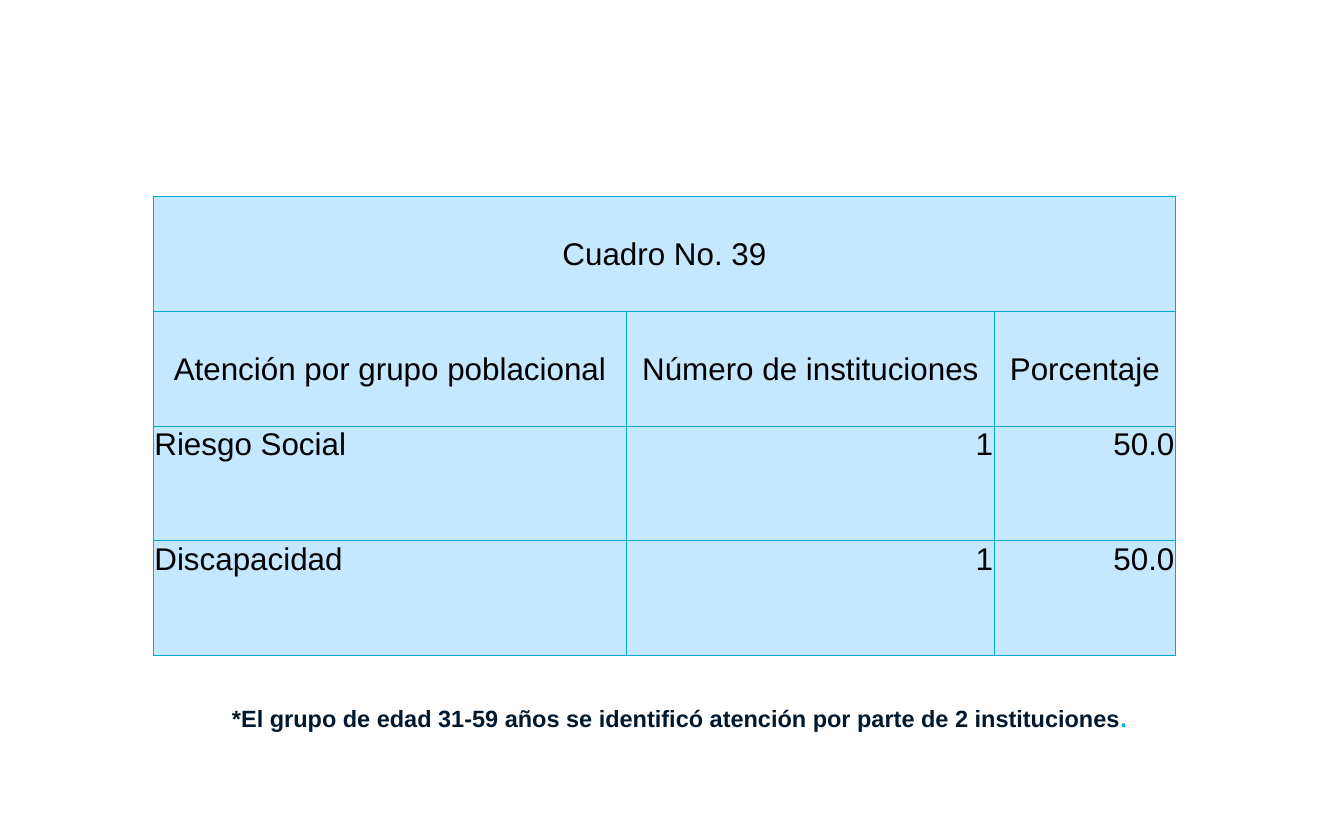
from lxml.etree import SubElement
from pptx import Presentation
from pptx.dml.color import RGBColor
from pptx.enum.text import MSO_ANCHOR as Anchor, MSO_AUTO_SIZE as Fit, PP_ALIGN as Align
from pptx.oxml.ns import qn
from pptx.util import Cm, Pt

BLACK = RGBColor(0x00, 0x00, 0x00)
NAVY = RGBColor(0x00, 0x19, 0x2F)
CYAN = RGBColor(0x00, 0xB0, 0xF0)
EDGE = RGBColor(0x00, 0xA9, 0xD7)
PALE = RGBColor(0xC4, 0xE8, 0xFF)

LEFT = Cm(4.14)
WIDTHS = [Cm(12.78), Cm(9.93), Cm(4.9)]
HEIGHT = Cm(3.1)
ROWS = [
    ["Cuadro No. 39", "", ""],
    ["Atención por grupo poblacional", "Número de instituciones", "Porcentaje"],
    ["Riesgo Social", "1", "50.0"],
    ["Discapacidad", "1", "50.0"],
]
HEADS = 2


def style(font, size, color, bold=False):
    font.name = "Arial"
    font.size = Pt(size)
    font.bold = bold
    font.color.rgb = color


def add_edges(cell):
    props = cell._tc.get_or_add_tcPr()
    for side in ("a:lnL", "a:lnR", "a:lnT", "a:lnB"):
        line = SubElement(props, qn(side), w=str(Pt(0.75)))
        fill = SubElement(line, qn("a:solidFill"))
        SubElement(fill, qn("a:srgbClr"), val=str(EDGE))


def fill_cell(cell, text, align, anchor):
    add_edges(cell)
    cell.fill.solid()
    cell.fill.fore_color.rgb = PALE
    cell.margin_left = cell.margin_right = cell.margin_top = Cm(0.03)
    cell.margin_bottom = 0
    cell.vertical_anchor = anchor
    cell.text_frame.text = text
    para = cell.text_frame.paragraphs[0]
    para.alignment = align
    style(para.font, 24, BLACK)
    for run in para.runs:
        style(run.font, 24, BLACK)


def add_grid(slide):
    frame = slide.shapes.add_table(
        len(ROWS), len(WIDTHS), LEFT, Cm(5.31), sum(WIDTHS), HEIGHT * len(ROWS))
    table = frame.table
    for col, width in zip(table.columns, WIDTHS):
        col.width = width
    for r, texts in enumerate(ROWS):
        table.rows[r].height = HEIGHT
        for c, text in enumerate(texts):
            if r < HEADS:
                align, anchor = Align.CENTER, Anchor.MIDDLE
            else:
                align = Align.RIGHT if c else Align.LEFT
                anchor = Anchor.TOP
            fill_cell(table.cell(r, c), text, align, anchor)
    table.cell(0, 0).merge(table.cell(0, len(WIDTHS) - 1))


def add_note(slide, parts):
    box = slide.shapes.add_textbox(LEFT, Cm(18.9), Cm(28.6), Cm(1.02))
    frame = box.text_frame
    frame.word_wrap = True
    frame.auto_size = Fit.SHAPE_TO_FIT_TEXT
    para = frame.paragraphs[0]
    para.alignment = Align.CENTER
    for text, color in parts:
        run = para.add_run()
        run.text = text
        style(run.font, 18, color, True)


def main():
    deck = Presentation()
    deck.slide_width = Cm(36.3)
    deck.slide_height = Cm(22.61)
    slide = deck.slides.add_slide(deck.slide_layouts[6])
    add_grid(slide)
    add_note(slide, [
        ("*El grupo de edad 31-59 años se identificó atención por parte de 2 instituciones", NAVY),
        (". ", CYAN),
    ])
    deck.save("out.pptx")


if __name__ == "__main__":
    main()
